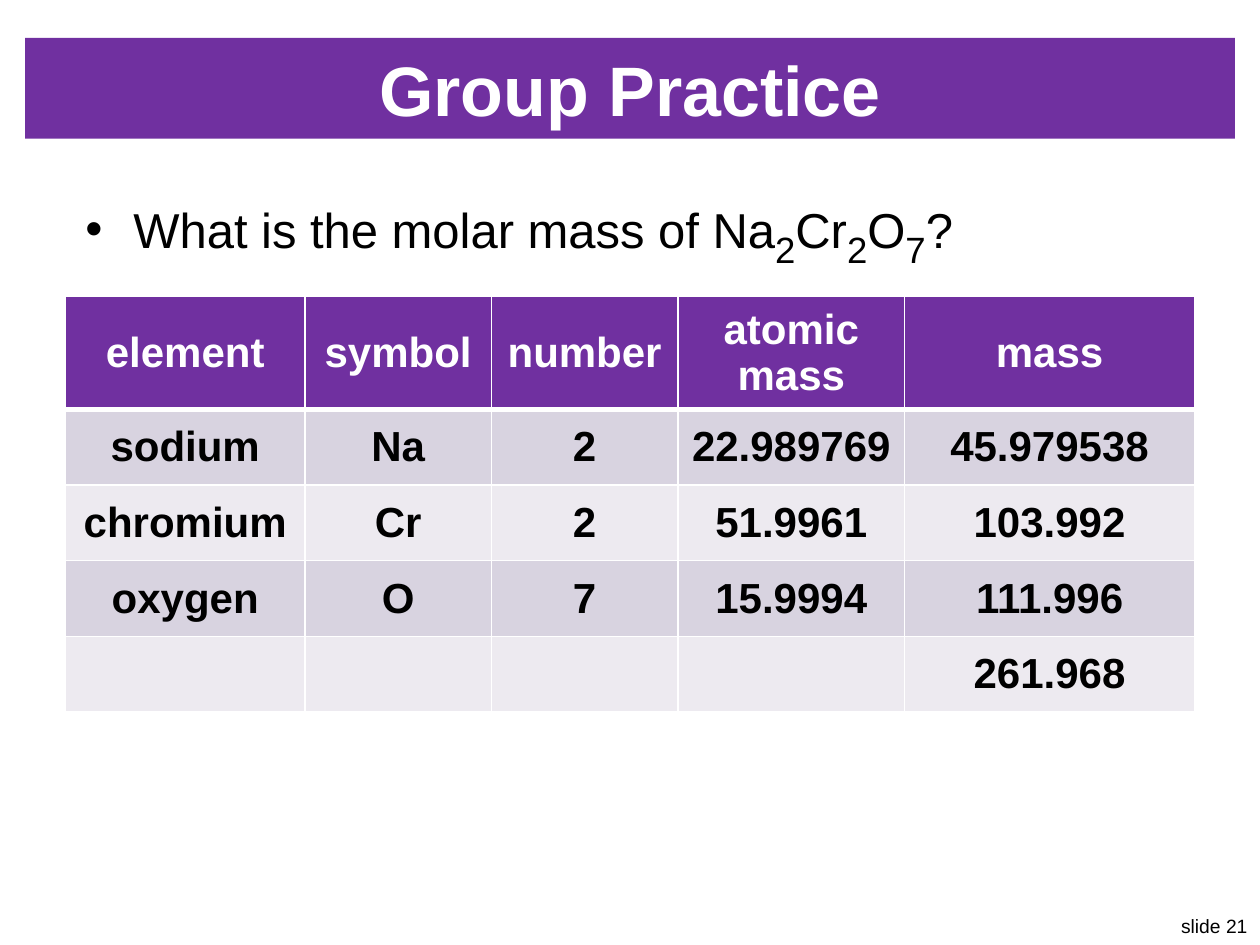
import pptx
import pptx.util
import pptx.dml.color
import pptx.enum.text
import pptx.oxml
import pptx.oxml.ns
from lxml import etree

Inches, Pt = pptx.util.Inches, pptx.util.Pt
RGBColor = pptx.dml.color.RGBColor
PP_ALIGN, MSO_ANCHOR = pptx.enum.text.PP_ALIGN, pptx.enum.text.MSO_ANCHOR
qn = pptx.oxml.ns.qn

PURPLE = RGBColor(0x70, 0x30, 0xA0)
WHITE = RGBColor(0xFF, 0xFF, 0xFF)
BLACK = RGBColor(0, 0, 0)
BANDS = (RGBColor(0xD8, 0xD3, 0xE0), RGBColor(0xED, 0xEA, 0xF0))
FONT = "Arial"

TITLE = "Group Practice"
FOOTER = "slide 21"
# (text, is subscript)
QUESTION = [
    ("What is the molar mass of Na", False), ("2", True), ("Cr", False),
    ("2", True), ("O", False), ("7", True), ("?", False),
]
ROWS = [
    ("element", "symbol", "number", "atomic mass", "mass"),
    ("sodium", "Na", "2", "22.989769", "45.979538"),
    ("chromium", "Cr", "2", "51.9961", "103.992"),
    ("oxygen", "O", "7", "15.9994", "111.996"),
    ("", "", "", "", "261.968"),
]
COL_WIDTHS = (1.9, 1.48, 1.48, 1.8, 2.3)
ROW_HEIGHT = 0.6


def style(r, size, color=BLACK, bold=False):
    r.font.name, r.font.size, r.font.bold = FONT, Pt(size), bold
    r.font.color.rgb = color


def set_border(cell, side, width):
    """Draw one white border; side is L, R, T or B."""
    ln = etree.SubElement(cell._tc.get_or_add_tcPr(), qn(f"a:ln{side}"), w=str(Pt(width)))
    fill = etree.SubElement(ln, qn("a:solidFill"))
    etree.SubElement(fill, qn("a:srgbClr"), val=str(WHITE))


def add_title(s):
    sp = s.shapes.title
    sp.left, sp.top, sp.width, sp.height = map(Inches, (0.2, 0.3, 9.6, 0.8))
    sp.fill.solid()
    sp.fill.fore_color.rgb = PURPLE
    tf = sp.text_frame
    tf.text = TITLE
    tf.vertical_anchor = MSO_ANCHOR.MIDDLE
    p = tf.paragraphs[0]
    p.alignment = PP_ALIGN.CENTER
    style(p.runs[0], 40, WHITE, True)


def add_question(s):
    sp = s.shapes.add_textbox(*map(Inches, (0.58, 1.42, 8.85, 0.71)))
    tf = sp.text_frame
    tf.word_wrap = True
    p = tf.paragraphs[0]
    p.space_before = Pt(12)
    pPr = p._p.get_or_add_pPr()
    pPr.set("marL", str(Inches(0.38)))
    pPr.set("indent", str(Inches(-0.38)))
    etree.SubElement(pPr, qn("a:buFont"), typeface=FONT)
    etree.SubElement(pPr, qn("a:buChar"), char="•")
    for text, subscript in QUESTION:
        r = p.add_run()
        r.text = text
        style(r, 36 if subscript else 28)
        if subscript:
            r._r.get_or_add_rPr().set("baseline", "-25000")


def add_mass_table(s):
    frame = s.shapes.add_table(
        len(ROWS), len(COL_WIDTHS), Inches(0.52), Inches(2.35),
        Inches(sum(COL_WIDTHS)), Inches(ROW_HEIGHT * len(ROWS)))
    table = frame.table
    for col, width in zip(table.columns, COL_WIDTHS):
        col.width = Inches(width)
    for i, values in enumerate(ROWS):
        table.rows[i].height = Inches(ROW_HEIGHT)
        header = i == 0
        for j, value in enumerate(values):
            cell = table.cell(i, j)
            for side in "LRTB":
                under_header = (i, side) in ((0, "B"), (1, "T"))
                set_border(cell, side, 3 if under_header else 1)
            cell.fill.solid()
            cell.fill.fore_color.rgb = PURPLE if header else BANDS[(i - 1) % 2]
            cell.vertical_anchor = MSO_ANCHOR.MIDDLE
            if value:
                cell.text_frame.text = value
                p = cell.text_frame.paragraphs[0]
                p.alignment = PP_ALIGN.CENTER
                style(p.runs[0], 24, WHITE if header else BLACK, True)


def add_footer(s):
    sp = s.shapes.add_textbox(*map(Inches, (9.25, 7.21, 0.75, 0.29)))
    tf = sp.text_frame
    tf.text = FOOTER
    tf.word_wrap = False
    p = tf.paragraphs[0]
    p.alignment = PP_ALIGN.RIGHT
    style(p.runs[0], 11)


def main():
    prs = pptx.Presentation()
    prs.slide_width, prs.slide_height = Inches(10), Inches(7.5)
    s = prs.slides.add_slide(prs.slide_layouts[5])
    add_footer(s)
    add_title(s)
    add_question(s)
    add_mass_table(s)
    prs.save("out.pptx")


if __name__ == "__main__":
    main()
